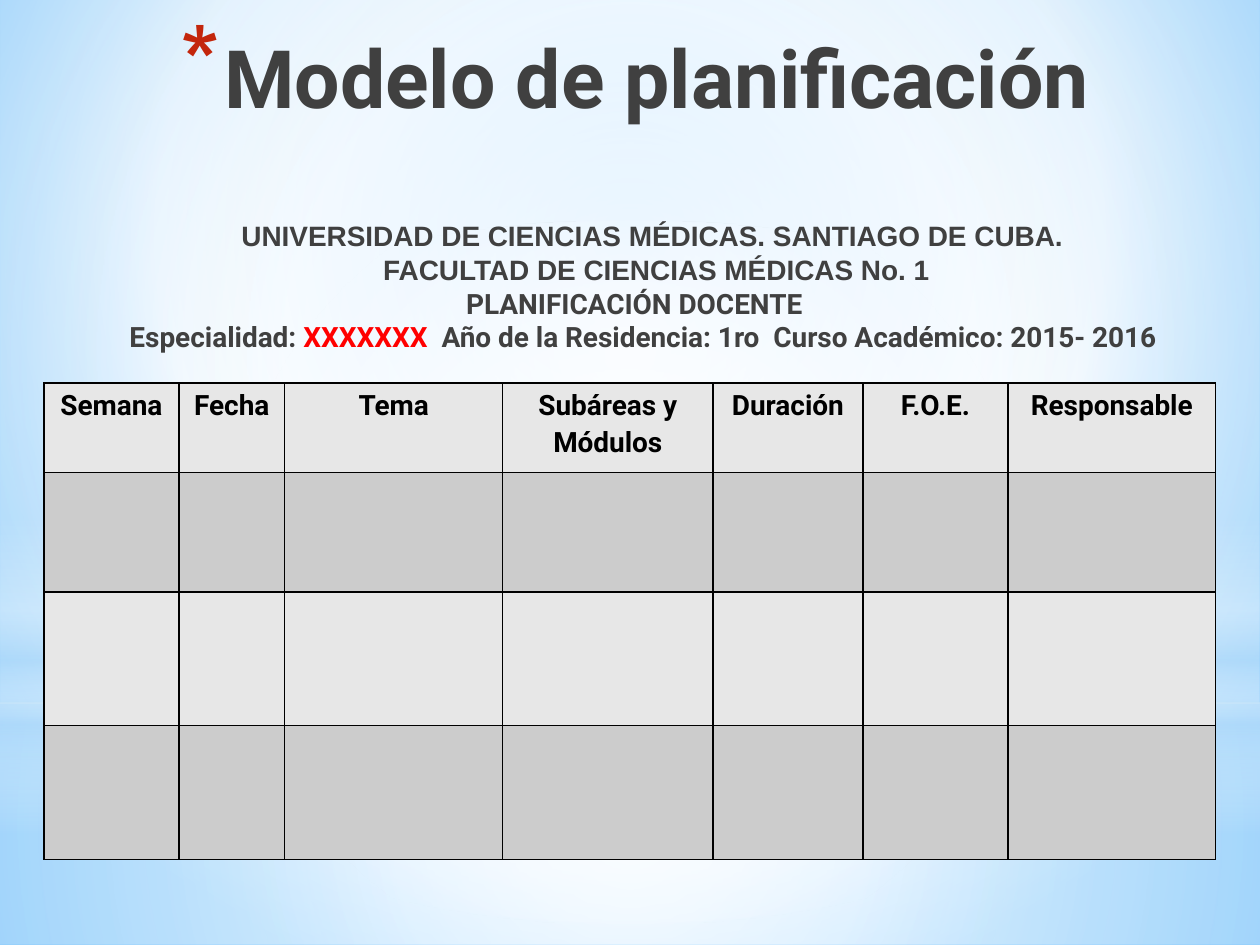
from lxml import etree
from pptx import Presentation
from pptx.dml.color import RGBColor
from pptx.enum.shapes import MSO_SHAPE
from pptx.enum.text import MSO_ANCHOR, PP_ALIGN
from pptx.oxml.ns import qn
from pptx.util import Inches, Pt

RECT, OVAL = MSO_SHAPE.RECTANGLE, MSO_SHAPE.OVAL
CENTER, TOP = PP_ALIGN.CENTER, MSO_ANCHOR.TOP
INK, RED, BLACK = "404040", "FF0000", "000000"
MID = (50, 50, 50, 50)


def rgb(code):
    return RGBColor.from_string(code)


def blend(parent, stops, to=None):
    """Swap the solid fill of parent for a gradient, radial if to is given."""
    grad = etree.Element(qn("a:gradFill"), rotWithShape="1")
    row = etree.SubElement(grad, qn("a:gsLst"))
    for pos, code, alpha in stops:
        stop = etree.SubElement(row, qn("a:gs"), pos=str(pos * 1000))
        tone = etree.SubElement(stop, qn("a:srgbClr"), val=code)
        if alpha < 100:
            etree.SubElement(tone, qn("a:alpha"), val=str(alpha * 1000))
    if to:
        path = etree.SubElement(grad, qn("a:path"), path="circle")
        sides = {side: str(share * 1000) for side, share in zip("ltrb", to)}
        etree.SubElement(path, qn("a:fillToRect"), sides)
    else:
        etree.SubElement(grad, qn("a:lin"), ang="5400000", scaled="0")
    parent.replace(parent.find(qn("a:solidFill")), grad)


deck = Presentation()
deck.slide_width, deck.slide_height = Inches(10), Inches(7.5)
wide = deck.slide_width
slide = deck.slides.add_slide(deck.slide_layouts[6])

# Background
slide.background.fill.solid()
blend(slide.element.find(".//" + qn("p:bgPr")),
      [(0, "9ED5FF", 100), (60, "FFFFFF", 100), (100, "5BB9FF", 100)],
      (20, 10, 20, 60))

# Soft light layers: shape, top, height, stops, centre
layers = [
    (RECT, 5.58, 1.92,
     [(0, "FFFFFF", 91), (37, "FFFFFF", 76), (100, "B4DCFA", 79)], MID),
    (RECT, 0, 5.58,
     [(0, "FFFFFF", 89), (48, "FFFFFF", 62), (100, "B4DCFA", 79)], MID),
    (RECT, 4.12, 2.5,
     [(0, "FFFFFF", 0), (29, "FFFFFF", 30), (45, "B4DCFA", 40),
      (55, "FFFFFF", 26), (65, "B4DCFA", 60), (100, "FFFFFF", 0)], None),
    (OVAL, 1.75, 5.58, [(0, "FFFFFF", 100), (56, "FFFFFF", 0)], MID),
]
for kind, top, high, stops, to in layers:
    glow = slide.shapes.add_shape(kind, 0, Inches(top), wide, Inches(high))
    glow.shadow.inherit = False
    glow.line.fill.background()
    glow.fill.solid()
    blend(glow.element.spPr, stops, to)

# Title and heading lines: size, font, left margin, runs
lines = [
    (46, "Roboto", 0.35, [("Modelo de planificación", INK)]),
    (16, "Arial", 0.29,
     [("UNIVERSIDAD DE CIENCIAS MÉDICAS. SANTIAGO DE CUBA.", INK)]),
    (16, "Arial", 0.35, [("FACULTAD DE CIENCIAS MÉDICAS No. 1", INK)]),
    (16, "Roboto", 0, [("PLANIFICACIÓN DOCENTE", INK)]),
    (16, "Roboto", 0.14,
     [("Especialidad: ", INK), ("XXXXXXX ", RED),
      (" Año de la Residencia: 1ro  Curso Académico: 2015- 2016", INK)]),
]
box = slide.shapes.add_textbox(Inches(0.43), Inches(0.13),
                               Inches(9.21), Inches(1.25))
frame = box.text_frame
frame.word_wrap = True
frame.vertical_anchor = TOP
frame.margin_top = Inches(0.09)
for i, (size, face, left, runs) in enumerate(lines):
    para = frame.add_paragraph() if i else frame.paragraphs[0]
    para.alignment = CENTER
    para.font.size, para.font.name, para.font.bold = Pt(size), face, True
    para.space_before = Pt(54 if i == 1 else 0)
    for words, code in runs:
        run = para.add_run()
        run.text = words
        run.font.color.rgb = rgb(code)
    para._p.get_or_add_pPr().set("marL", str(Inches(left)))

# Red asterisk bullet on the title
props = frame.paragraphs[0]._p.get_or_add_pPr()
props.set("indent", str(Inches(-0.35)))
marks = [etree.Element(qn("a:buClr")),
         etree.Element(qn("a:buSzPct"), val="128000"),
         etree.Element(qn("a:buChar"), char="*")]
etree.SubElement(marks[0], qn("a:srgbClr"), val="C3260C")
spot = props.index(props.find(qn("a:spcBef"))) + 1
props[spot:spot] = marks

# Planning table
heads = ["Semana", "Fecha", "Tema", "Subáreas y Módulos",
         "Duración", "F.O.E.", "Responsable"]
cols = [1.07, 0.84, 1.73, 1.67, 1.19, 1.15, 1.65]
rows = [0.71, 0.95, 1.06, 1.06]
table = slide.shapes.add_table(len(rows), len(cols), Inches(0.35), Inches(3.04),
                               Inches(sum(cols)), Inches(sum(rows))).table
for col, span in zip(table.columns, cols):
    col.width = Inches(span)
for r, high in enumerate(rows):
    table.rows[r].height = Inches(high)
    for c, head in enumerate(heads):
        cell = table.cell(r, c)
        cell.margin_left = cell.margin_right = Inches(0.05)
        cell.margin_top, cell.margin_bottom = Inches(0.01), 0
        for side in "LRTB":
            edge = etree.SubElement(cell._tc.get_or_add_tcPr(),
                                    qn("a:ln" + side), w=str(Pt(1)))
            ink = etree.SubElement(edge, qn("a:solidFill"))
            etree.SubElement(ink, qn("a:srgbClr"), val=BLACK)
        cell.fill.solid()
        cell.fill.fore_color.rgb = rgb("CCCCCC" if r % 2 else "E7E7E7")
        if r == 0:
            cell.text = head
            para = cell.text_frame.paragraphs[0]
            para.alignment = CENTER
            para.line_spacing, para.space_after = 1.15, Pt(10)
            font = para.font
            font.size, font.name, font.bold = Pt(16), "Roboto", True
            font.color.rgb = rgb(BLACK)

deck.save("out.pptx")
